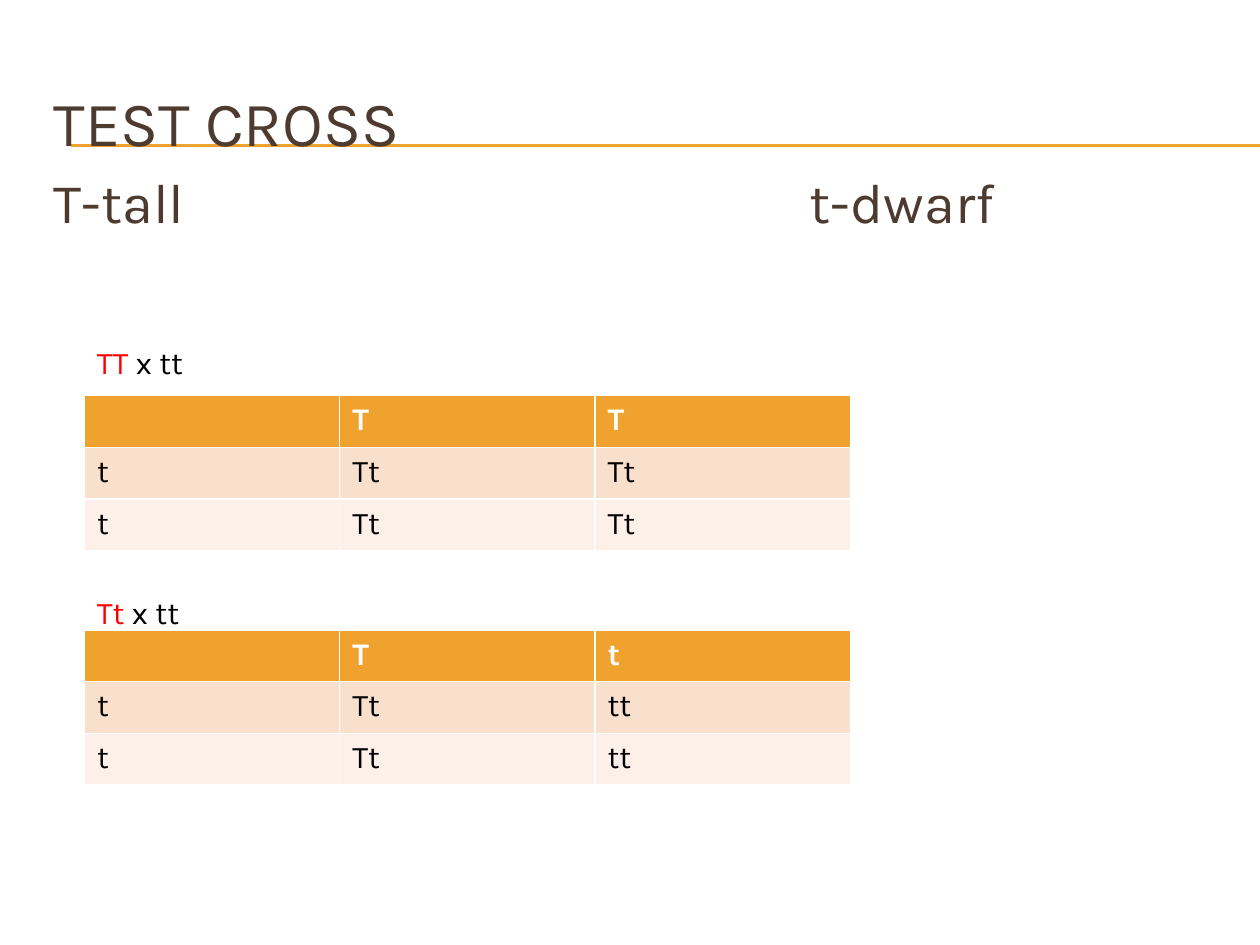
"""Build the test cross slide with its two Punnett squares."""
from lxml import etree
from pptx import Presentation
from pptx.dml.color import RGBColor
from pptx.enum.shapes import MSO_CONNECTOR
from pptx.enum.text import MSO_ANCHOR
from pptx.oxml.ns import qn
from pptx.util import Inches, Pt

LINE = MSO_CONNECTOR.STRAIGHT
TOP, MIDDLE = MSO_ANCHOR.TOP, MSO_ANCHOR.MIDDLE

THEME = {
    "font": "Karla", "title": 36, "body": 32, "text": 18,
    "ink": "4E3B30", "gold": "F0A22E", "black": "000000",
    "white": "FFFFFF", "red": "FF0000", "bands": ("F9E0CD", "FCF0E8"),
}
TITLE = "TEST CROSS"
TRAITS = ("T-tall", "t-dwarf")
RULES = (1.15, 1.16)
CROSSES = [
    {"pair": ("TT", " x tt"), "label": 2.67, "top": 3.14,
     "rows": [("", "T", "T"), ("t", "Tt", "Tt"), ("t", "Tt", "Tt")]},
    {"pair": ("Tt", " x tt"), "label": 4.66, "top": 5,
     "rows": [("", "T", "t"), ("t", "Tt", "tt"), ("t", "Tt", "tt")]},
]
LEFT, COL, ROW = 0.67, 6.08 / 3, 0.41


def color(name):
    return RGBColor.from_string(THEME.get(name, name))


def style(run, size, ink, bold=False):
    font = run.font
    font.name, font.size, font.bold = THEME["font"], Pt(THEME[size]), bold
    font.color.rgb = color(ink)


def add_text(slide, box, parts, size, anchor=TOP):
    frame = slide.shapes.add_textbox(*map(Inches, box)).text_frame
    frame.word_wrap = True
    frame.vertical_anchor = anchor
    para = frame.paragraphs[0]
    for text, ink in parts:
        run = para.add_run()
        run.text = text
        style(run, size, ink)
    return para


def add_rule(slide, y):
    rule = slide.shapes.add_connector(
        LINE, Inches(0.56), Inches(y), Inches(10), Inches(y))
    rule.line.color.rgb = color("gold")
    rule.line.width = Pt(0.75)
    etree.SubElement(rule._element.spPr, qn("a:effectLst"))


def add_tab(para, x):
    tabs = etree.SubElement(para._p.get_or_add_pPr(), qn("a:tabLst"))
    etree.SubElement(tabs, qn("a:tab"), pos=str(Inches(x)), algn="l")


def add_square(slide, top, rows):
    count, wide = len(rows), len(rows[0])
    table = slide.shapes.add_table(
        count, wide, Inches(LEFT), Inches(top),
        Inches(COL * wide), Inches(ROW * count)).table
    for r, row in enumerate(rows):
        head = r == 0
        fill = "gold" if head else THEME["bands"][(r - 1) % 2]
        for c, text in enumerate(row):
            cell = table.cell(r, c)
            cell.fill.solid()
            cell.fill.fore_color.rgb = color(fill)
            if text:
                cell.text_frame.text = text
                run = cell.text_frame.paragraphs[0].runs[0]
                style(run, "text", "white" if head else "black", head)


def main():
    deck = Presentation()
    deck.slide_width, deck.slide_height = Inches(10), Inches(7.5)
    slide = deck.slides.add_slide(deck.slide_layouts[6])
    for y in RULES:
        add_rule(slide, y)
    add_text(slide, (0.33, 0.5, 9.5, 0.92), [(TITLE, "ink")], "title", MIDDLE)
    traits = add_text(slide, (0.33, 1.28, 9.5, 5.37),
                      [("\t".join(TRAITS), "ink")], "body")
    add_tab(traits, 6)
    for cross in CROSSES:
        add_square(slide, cross["top"], cross["rows"])
    for cross in CROSSES:
        parts = zip(cross["pair"], ("red", "black"))
        add_text(slide, (LEFT, cross["label"], 3, 0.4), parts, "text")
    deck.save("out.pptx")


if __name__ == "__main__":
    main()
